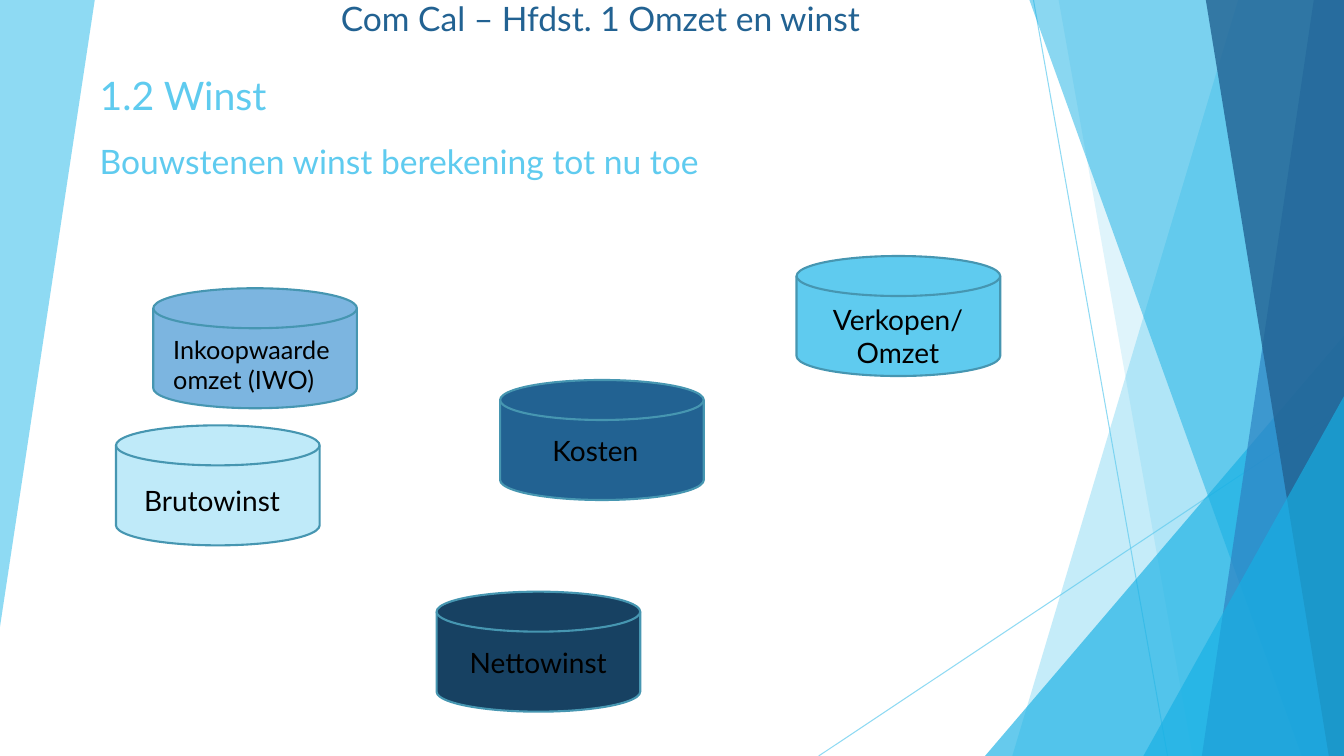
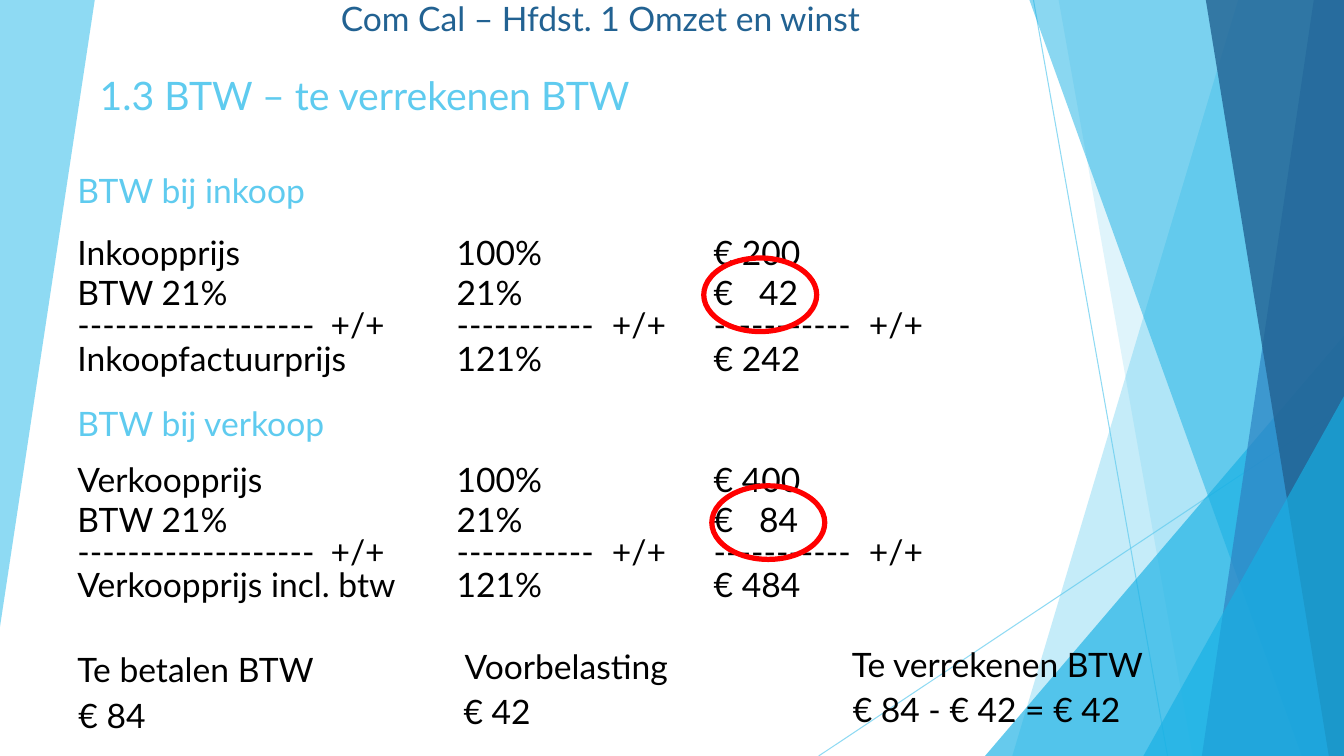
import pptx
import pptx.dml.color
import pptx.enum.shapes
import pptx.enum.text
import pptx.oxml
import pptx.oxml.ns
import pptx.util

Inches, Pt = pptx.util.Inches, pptx.util.Pt
Kind = pptx.enum.shapes.MSO_SHAPE
Align = pptx.enum.text.PP_ALIGN
Anchor = pptx.enum.text.MSO_ANCHOR
Fit = pptx.enum.text.MSO_AUTO_SIZE

# Shared look
FONT = "Lato"
BLACK, RED = "000000", "FF0000"
SKY, AQUA, BLUE, NAVY, EDGE = "5FCBEF", "17B0E4", "2E83C3", "226292", "4696B1"
WIDE, HIGH = 13.33, 7.5
TITLE = "Com Cal – Hfdst. 1 Omzet en winst"


def tint(part, color, alpha=100):
    """Give a fill or a line fill a solid colour with an opacity in percent."""
    part.solid()
    part.fore_color.rgb = pptx.dml.color.RGBColor.from_string(color)
    if alpha < 100:
        node = part._xPr.find(".//" + pptx.oxml.ns.qn("a:srgbClr"))
        add_node(node, "alpha", val=alpha * 1000)


def add_node(parent, tag, **attrs):
    node = pptx.oxml.parse_xml(f"<a:{tag} {pptx.oxml.ns.nsdecls('a')}/>")
    for key, value in attrs.items():
        node.set(key, str(value))
    parent.append(node)
    return node


def put(slide, kind, box, fill=None, alpha=100, edge=None, width=0):
    shape = slide.shapes.add_shape(kind, *map(Inches, box))
    shape.shadow.inherit = False
    if fill:
        tint(shape.fill, fill, alpha)
    else:
        shape.fill.background()
    if edge:
        tint(shape.line.fill, edge)
        shape.line.width = Pt(width)
    else:
        shape.line.fill.background()
    return shape


def write(slide, box, lines, size=24, color=BLACK, align=Align.LEFT, tab=None, **extra):
    """Place a text box; tab is a stop measured from the text edge."""
    frame = slide.shapes.add_textbox(*map(Inches, box)).text_frame
    form = {"word_wrap": True, "auto_size": Fit.SHAPE_TO_FIT_TEXT} | extra
    for key, value in form.items():
        setattr(frame, key, value)
    for i, line in enumerate(lines):
        para = frame.paragraphs[0] if i == 0 else frame.add_paragraph()
        para.alignment = align
        if tab:
            stops = add_node(para._p.get_or_add_pPr(), "tabLst")
            add_node(stops, "tab", pos=Inches(tab), algn="l")
        run = para.add_run()
        run.text = line
        for key, value in {"name": FONT, "size": Pt(size)}.items():
            setattr(run.font, key, value)
        tint(run.font.fill, color)


# Background facets
def facet(slide, points, color, alpha):
    (x, y), *rest = [(Inches(x), Inches(y)) for x, y in points]
    pen = slide.shapes.build_freeform(x, y)
    pen.add_line_segments(rest, close=True)
    shape = pen.convert_to_shape()
    shape.shadow.inherit = False
    tint(shape.fill, color, alpha)
    shape.line.fill.background()


def band(slide, top, foot, color, alpha):
    """Fill from a slanted left edge to the right side of the slide."""
    facet(slide, [(top, 0), (WIDE, 0), (WIDE, HIGH), (foot, HIGH)], color, alpha)


def wedge(slide, left, top):
    box = left, top, WIDE - left, HIGH - top
    put(slide, Kind.ISOSCELES_TRIANGLE, box, AQUA, 66).adjustments[0] = 1


def ray(slide, *ends):
    line = slide.shapes.add_connector(
        pptx.enum.shapes.MSO_CONNECTOR.STRAIGHT, *map(Inches, ends))
    tint(line.line.fill, SKY, 70)
    line.line.width = Pt(0.75)
    add_node(line._element.spPr, "effectLst")


def base(deck, head):
    """Start a slide with the facets, the running title and its heading."""
    slide = deck.slides.add_slide(deck.slide_layouts[6])
    facet(slide, [(0, 0), (0.94, 0), (0, 6.22)], SKY, 70)
    ray(slide, 10.25, 0, 11.58, HIGH)
    ray(slide, WIDE, 4.03, 8.12, HIGH)
    band(slide, 12.28, 10.04, SKY, 36)
    band(slide, 10.5, 11.83, SKY, 20)
    wedge(slide, 9.77, 3.33)
    band(slide, 10.21, 12.91, AQUA, 50)
    band(slide, 13.03, 11.92, BLUE, 70)
    band(slide, 11.96, 13.18, NAVY, 80)
    wedge(slide, 11.34, 3.93)
    write(slide, (0.06, 0, 11.79, 0.43), [TITLE], color=NAVY, align=Align.CENTER,
          auto_size=Fit.NONE, vertical_anchor=Anchor.BOTTOM)
    write(slide, (0.89, 0.66, 9.5, 0.57), [head], size=28, color=SKY)
    return slide


# Profit slide
def disk(slide, left, top, fill, text, dx, dy, width, size=20, align=Align.LEFT):
    put(slide, Kind.FLOWCHART_MAGNETIC_DISK, (left, top, 2.02, 1.19), fill,
        edge=EDGE, width=1.5)
    write(slide, (left + dx, top + dy, width, 0.44), [text], size, align=align)


def profit(deck):
    slide = base(deck, "1.2 Winst")
    write(slide, (0.89, 1.35, 9.5, 0.5),
          ["Bouwstenen winst berekening tot nu toe"], color=SKY)
    disk(slide, 4.33, 5.87, "174162", "Nettowinst", 0.23, 0.48, 1.7)
    disk(slide, 1.15, 4.22, "BFEAF9", "Brutowinst", 0.18, 0.53, 1.55)
    disk(slide, 4.96, 3.77, NAVY, "Kosten", 0.17, 0.48, 1.55, align=Align.CENTER)
    disk(slide, 1.52, 2.86, "7CB5E0", "Inkoopwaarde omzet (IWO)", 0.1, 0.41, 1.8, 18)
    disk(slide, 7.9, 2.54, SKY, "Verkopen/Omzet", 0.23, 0.41, 1.55, align=Align.CENTER)


# VAT slide
COLS = [(0.67, 3.75, 19, 2.51), (4.43, 2.55, 11, 1.54), (6.98, 2.55, 11, 1.54)]


def sums(slide, top, cols):
    """Write one sum: two terms, a dashed rule and the total per column."""
    for (left, width, count, stop), (first, second, total) in zip(COLS, cols):
        write(slide, (left, top, width, 0.91), [first, second], tab=0.45)
        write(slide, (left, top + 0.72, width, 0.5), ["-" * count + "\t+/+"], tab=stop)
        write(slide, (left, top + 1.05, width, 0.5), [total])


def result(slide, left, top, label, value, dx):
    write(slide, (left, top, 3.5, 0.5), [label])
    write(slide, (left + dx, top + 0.45, 3.07, 0.5), [value])


def vat(deck):
    slide = base(deck, "1.3 BTW – te verrekenen BTW")
    rates = "100%", "21%", "121%"
    write(slide, (0.67, 1.64, 3.15, 0.5), ["BTW bij inkoop"], color=SKY)
    sums(slide, 2.25, [("Inkoopprijs", "BTW 21%", "Inkoopfactuurprijs"), rates,
                       ("€ 200", "€\t42", "€ 242")])
    write(slide, (0.67, 3.95, 3.15, 0.5), ["BTW bij verkoop"], color=SKY)
    sums(slide, 4.5, [("Verkoopprijs", "BTW 21%", "Verkoopprijs incl. btw"), rates,
                      ("€ 400", "€\t84", "€ 484")])
    for left, top in [(7.06, 4.82), (6.98, 2.56)]:
        put(slide, Kind.OVAL, (left, top, 1.12, 0.73), edge=RED, width=3.75)
    result(slide, 0.67, 6.39, "Te betalen BTW", "€ 84", 0.01)
    result(slide, 4.51, 6.36, "Voorbelasting", "€ 42", -0.01)
    result(slide, 8.35, 6.34, "Te verrekenen BTW", "€ 84 - € 42 = € 42", 0.01)


def main():
    deck = pptx.Presentation()
    deck.slide_width, deck.slide_height = Inches(WIDE), Inches(HIGH)
    profit(deck)
    vat(deck)
    deck.save("out.pptx")


if __name__ == "__main__":
    main()
